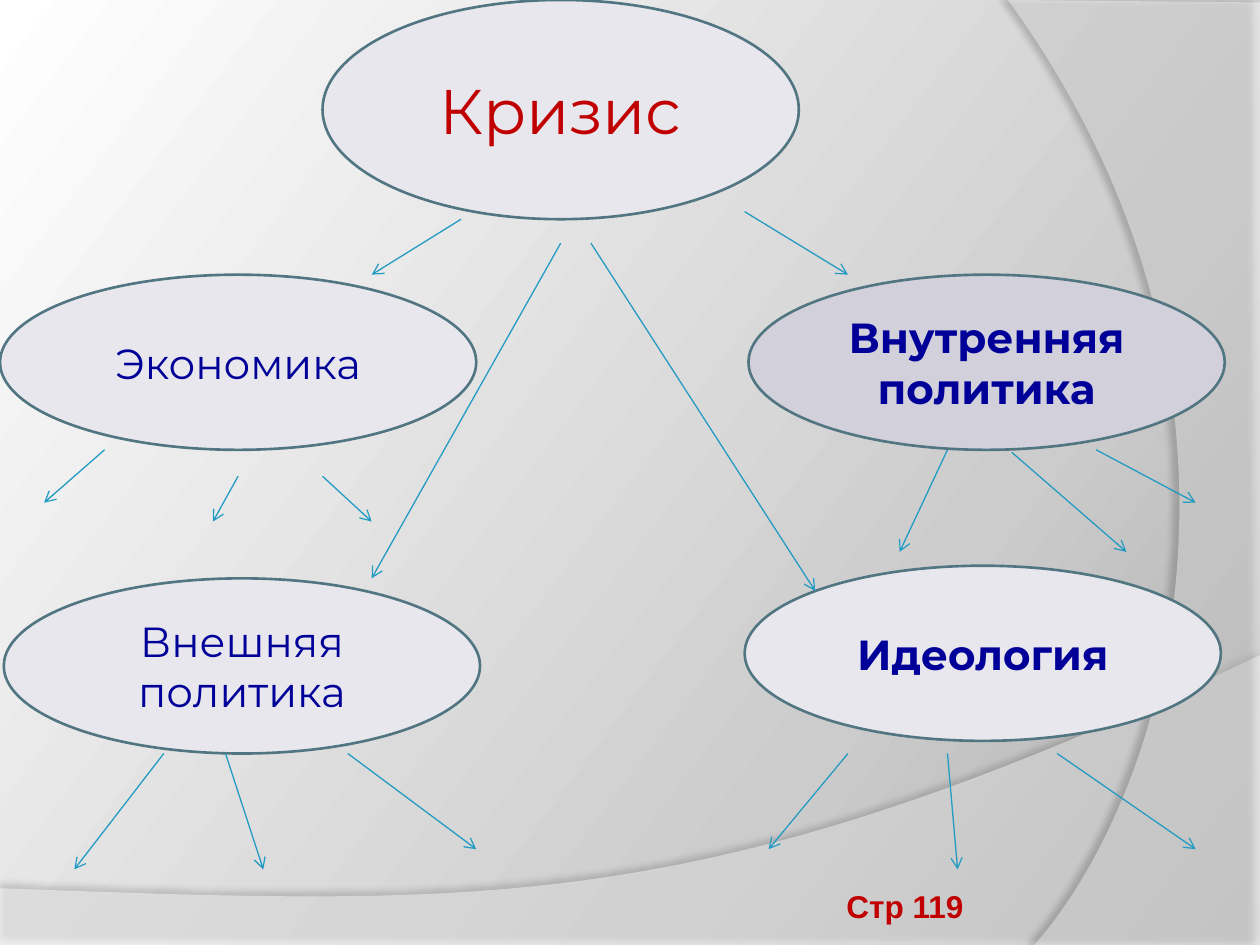
from dataclasses import dataclass

import lxml.etree
import pptx
import pptx.dml.color
import pptx.enum.dml
import pptx.enum.shapes
import pptx.enum.text
import pptx.oxml.ns
import pptx.util

RGBColor = pptx.dml.color.RGBColor
Point = tuple[float, float]

COLUMNS, ROWS = 100, 75
SLIDE_WIDTH, SLIDE_HEIGHT = pptx.util.Inches(10), pptx.util.Inches(7.5)

WHITE = RGBColor(0xFF, 0xFF, 0xFF)
BLACK = RGBColor(0x00, 0x00, 0x00)
RED = RGBColor(0xC0, 0x00, 0x00)
NAVY = RGBColor(0x00, 0x00, 0x99)
PALE = RGBColor(0xE8, 0xE7, 0xED)
LILAC = RGBColor(0xD1, 0xD0, 0xDB)
OUTLINE = RGBColor(0x51, 0x76, 0x82)
ARROW = RGBColor(0x23, 0x9B, 0xC2)
BACKDROP = (
    (0, RGBColor(0xAB, 0xAB, 0xAB)),
    (30, RGBColor(0xCC, 0xCC, 0xCC)),
    (100, WHITE),
)
BACKDROP_ANGLE = 217
TOPIC_WIDTH, TOPIC_HEIGHT, CRISIS_HEIGHT = 37.8, 13.9, 17.4


@dataclass(frozen=True)
class Topic:
    text: str
    left: float
    top: float
    height: float = TOPIC_HEIGHT
    fill: RGBColor = PALE
    color: RGBColor = NAVY
    size: int = 24
    bold: bool = False


@dataclass(frozen=True)
class Fan:
    start_row: float
    arrows: tuple[tuple[float, float, float], ...]


@dataclass(frozen=True)
class Wave:
    corners: tuple[Point, ...]
    curve_index: int
    controls: tuple[Point, Point]
    opacity: int
    shadow_opacity: int
    shadow_distance: float
    shadow_angle: int


TOPICS = (
    Topic("Кризис", 25.6, 0, height=CRISIS_HEIGHT, color=RED, size=36),
    Topic("Экономика", 0, 21.8),
    Topic("Внешняя политика", 0.3, 45.9),
    Topic("Внутренняя политика", 59.4, 21.8, fill=LILAC, bold=True),
    Topic("Идеология", 59.1, 44.9, bold=True),
)

FANS = (
    Fan(17.4, ((36.6, 29.5, 21.8),)),
    Fan(16.8, ((59.1, 67.3, 21.8),)),
    Fan(19.3, ((44.5, 29.5, 45.9), (46.9, 64.7, 46.9))),
    Fan(35.7, ((8.3, 3.5, 39.9),)),
    Fan(37.8, ((18.9, 16.9, 41.4), (25.6, 29.5, 41.4))),
    Fan(59.8, ((13, 5.9, 69), (17.9, 20.9, 69), (27.6, 37.8, 67.4))),
    Fan(59.8, ((67.3, 61, 67.4), (75.2, 76, 69), (83.9, 94.9, 67.4))),
    Fan(35.7, ((75.2, 71.4, 43.8), (87, 94.9, 39.9))),
    Fan(35.9, ((80.3, 89.4, 43.8),)),
)

WAVES = (
    Wave(((0, 70.5), (0, 75.1), (100, 75.1), (100, 52), (0, 70.5)), 4,
         ((55.9, 72.9), (39.1, 71.9)), 45, 35, 3.5, 270),
    Wave(((100, 0.2), (100, 75), (82.1, 75), (80, 0), (100, 0.2)), 3,
         ((93.5, 61.9), (101.8, 30)), 40, 45, 4, 180),
)


def col(count: float) -> int:
    return round(SLIDE_WIDTH * count / COLUMNS)


def row(count: float) -> int:
    return round(SLIDE_HEIGHT * count / ROWS)


def add_child(parent, tag: str, **attributes):
    values = {name: str(value) for name, value in attributes.items()}
    return lxml.etree.SubElement(parent, pptx.oxml.ns.qn(tag), values)


def add_color(parent, color: RGBColor, opacity: int = 100) -> None:
    entry = add_child(parent, "a:srgbClr", val=color)
    if opacity < 100:
        add_child(entry, "a:alpha", val=opacity * 1000)


def write_text(frame, text: str, *, font: str, size: int, color: RGBColor,
               bold: bool = False, align=None, anchor=None) -> None:
    frame.word_wrap = True
    if anchor is not None:
        frame.vertical_anchor = anchor
    paragraph = frame.paragraphs[0]
    paragraph.alignment = align
    run = paragraph.add_run()
    run.text = text
    run.font.name = font
    run.font.size = pptx.util.Pt(size)
    run.font.bold = bold
    run.font.color.rgb = color


def paint_backdrop(slide) -> None:
    fill = slide.background.fill
    fill.gradient()
    fill.gradient_angle = 360 - BACKDROP_ANGLE
    stops = slide.element.find(".//" + pptx.oxml.ns.qn("a:gsLst"))
    for stop in list(stops):
        stops.remove(stop)
    for position, color in BACKDROP:
        add_color(add_child(stops, "a:gs", pos=position * 1000), color)


def add_wave(slide, wave: Wave) -> None:
    corners = [(col(x), row(y)) for x, y in wave.corners]
    builder = slide.shapes.build_freeform(*corners[0], scale=1.0)
    builder.add_line_segments(corners[1:], close=True)
    shape = builder.convert_to_shape()
    shape.line.fill.background()
    shape.fill.solid()
    shape.fill.fore_color.rgb = WHITE
    properties = shape.element.spPr
    white = properties.find(".//" + pptx.oxml.ns.qn("a:srgbClr"))
    add_child(white, "a:alpha", val=wave.opacity * 1000)

    segments = properties.findall(".//" + pptx.oxml.ns.qn("a:lnTo"))
    segment = segments[wave.curve_index - 1]
    curve = lxml.etree.Element(pptx.oxml.ns.qn("a:cubicBezTo"))
    for x, y in wave.controls:
        add_child(curve, "a:pt", x=col(x) - shape.left, y=row(y) - shape.top)
    segment.addprevious(curve)
    curve.append(segment[0])
    segment.getparent().remove(segment)

    shape.shadow.inherit = False
    effects = properties.find(pptx.oxml.ns.qn("a:effectLst"))
    shadow = add_child(effects, "a:outerShdw", blurRad=pptx.util.Pt(4),
                       dist=pptx.util.Pt(wave.shadow_distance),
                       dir=wave.shadow_angle * 60000, algn="ctr", rotWithShape=0)
    add_color(shadow, BLACK, wave.shadow_opacity)


def add_topic(slide, topic: Topic) -> None:
    ellipse = slide.shapes.add_shape(
        pptx.enum.shapes.MSO_SHAPE.OVAL, col(topic.left), row(topic.top),
        col(TOPIC_WIDTH), row(topic.height))
    ellipse.shadow.inherit = False
    ellipse.fill.solid()
    ellipse.fill.fore_color.rgb = topic.fill
    ellipse.line.color.rgb = OUTLINE
    ellipse.line.width = pptx.util.Pt(1.5)
    write_text(ellipse.text_frame, topic.text, font="Montserrat", size=topic.size,
               color=topic.color, bold=topic.bold,
               align=pptx.enum.text.PP_ALIGN.CENTER,
               anchor=pptx.enum.text.MSO_ANCHOR.MIDDLE)


def add_arrows(slide, fan: Fan) -> None:
    for start_col, end_col, end_row in fan.arrows:
        arrow = slide.shapes.add_connector(
            pptx.enum.shapes.MSO_CONNECTOR.STRAIGHT, col(start_col),
            row(fan.start_row), col(end_col), row(end_row))
        arrow.line.color.rgb = ARROW
        arrow.line.width = pptx.util.Pt(0.75)
        add_child(arrow.line._get_or_add_ln(), "a:tailEnd", type="arrow")
        add_child(arrow.element.spPr, "a:effectLst")


def add_page_reference(slide) -> None:
    reference = slide.shapes.add_textbox(col(66.2), row(69.9), col(35.3), row(4))
    reference.text_frame.auto_size = pptx.enum.text.MSO_AUTO_SIZE.SHAPE_TO_FIT_TEXT
    write_text(reference.text_frame, "Стр 119", font="Arial", size=18,
               color=RED, bold=True)


def main() -> None:
    presentation = pptx.Presentation()
    presentation.slide_width, presentation.slide_height = SLIDE_WIDTH, SLIDE_HEIGHT
    slide = presentation.slides.add_slide(presentation.slide_layouts[6])
    paint_backdrop(slide)
    for wave in WAVES:
        add_wave(slide, wave)
    for topic in TOPICS:
        add_topic(slide, topic)
    for fan in FANS:
        add_arrows(slide, fan)
    add_page_reference(slide)
    presentation.save("out.pptx")


if __name__ == "__main__":
    main()
